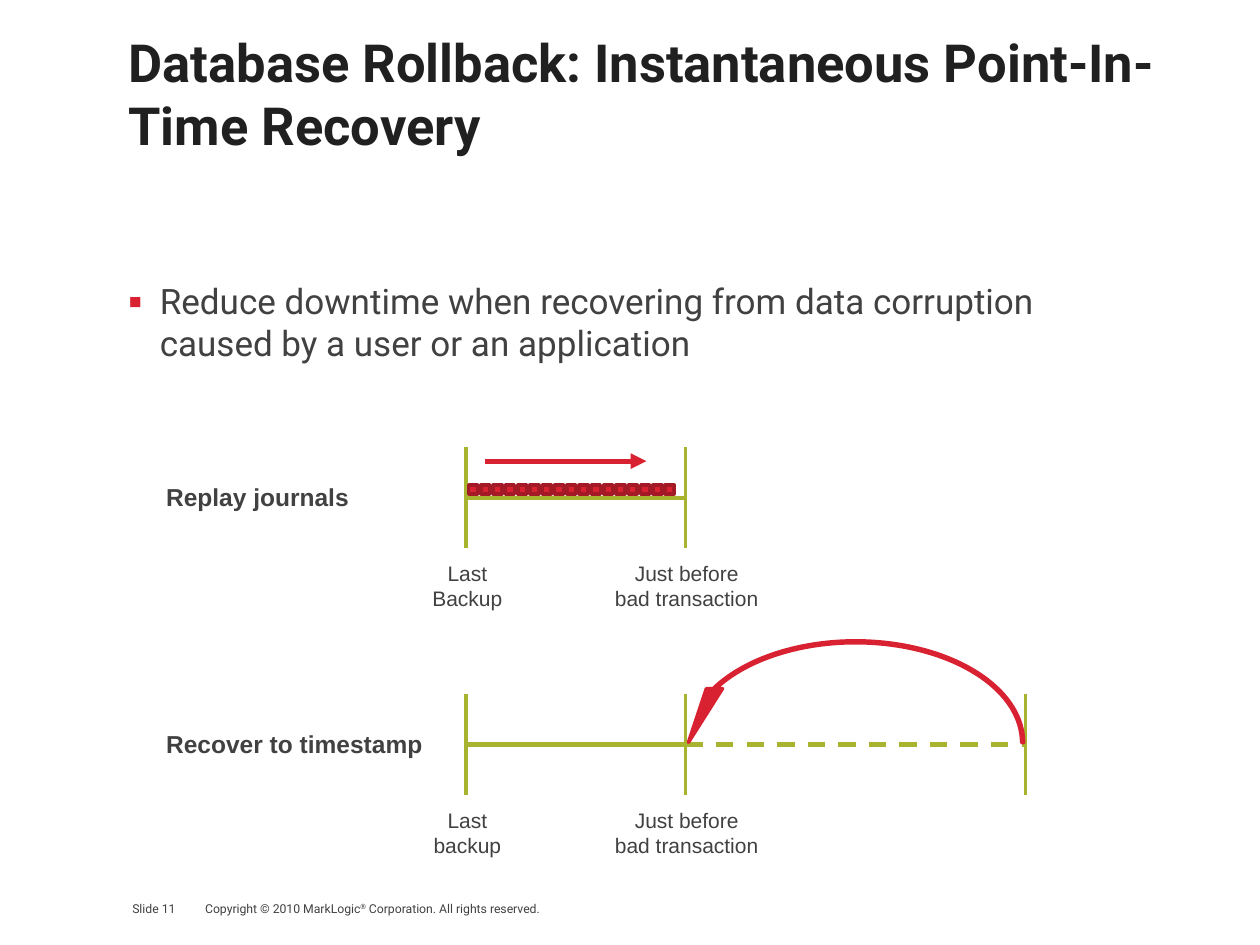
from lxml import etree
from pptx import Presentation
from pptx.dml.color import RGBColor
from pptx.enum.dml import MSO_LINE
from pptx.enum.shapes import MSO_CONNECTOR, MSO_SHAPE
from pptx.enum.text import MSO_ANCHOR, MSO_AUTO_SIZE, PP_ALIGN
from pptx.oxml.ns import qn
from pptx.util import Inches, Pt

COLORS = {
    "title": "202020",
    "text": "414141",
    "timeline": "A8B42F",
    "red": "D92231",
    "dark_red": "A31925",
}
REGISTERED = "®"

prs = Presentation()
prs.slide_width, prs.slide_height = Inches(10), Inches(7.5)
slide = prs.slides.add_slide(prs.slide_layouts[5])


def write(text, left, top, width, height, *, shape=None, size=12, font="Arial",
          color="text", bold=False, align=PP_ALIGN.LEFT, anchor=MSO_ANCHOR.TOP,
          wrap=True, inset=None, bullet=None):
    """Set text in a given shape or a new text box, one paragraph per line."""
    box = (Inches(left), Inches(top), Inches(width), Inches(height))
    if shape is None:
        shape = slide.shapes.add_textbox(*box)
    else:
        shape.left, shape.top, shape.width, shape.height = box
    frame = shape.text_frame
    frame.word_wrap = wrap
    frame.auto_size = MSO_AUTO_SIZE.NONE
    frame.vertical_anchor = anchor
    if inset is not None:
        frame.margin_left = frame.margin_right = Inches(inset)
        frame.margin_top = frame.margin_bottom = Inches(inset)
    for i, line in enumerate(text.split("\n")):
        paragraph = frame.add_paragraph() if i else frame.paragraphs[0]
        paragraph.alignment = align
        if bullet:
            props = paragraph._p.get_or_add_pPr()
            props.set("marL", str(Inches(0.25)))
            props.set("indent", str(-Inches(0.25)))
            bullet_color = etree.SubElement(props, qn("a:buClr"))
            etree.SubElement(bullet_color, qn("a:srgbClr"), val=COLORS["red"])
            etree.SubElement(props, qn("a:buFont"), typeface=font)
            etree.SubElement(props, qn("a:buChar"), char=bullet)
        for part in filter(None, line.partition(REGISTERED)):
            run = paragraph.add_run()
            run.text = part
            run.font.size = Pt(size)
            run.font.name = font
            run.font.bold = bold
            run.font.color.rgb = RGBColor.from_string(COLORS[color])
            if part == REGISTERED:
                run.font._element.set("baseline", "30000")


def draw_line(x1, y1, x2, y2, *, color="timeline", weight=2.0, dash=None, arrow=False):
    line = slide.shapes.add_connector(
        MSO_CONNECTOR.STRAIGHT, Inches(x1), Inches(y1), Inches(x2), Inches(y2))
    line.line.color.rgb = RGBColor.from_string(COLORS[color])
    line.line.width = Pt(weight)
    if dash:
        line.line.dash_style = dash
    if arrow:
        etree.SubElement(line.line._get_or_add_ln(), qn("a:tailEnd"), type="triangle")
    etree.SubElement(line._element.spPr, qn("a:effectLst"))


# Footer
write("Slide 11", 1.05, 7.15, 0.65, 0.12, size=7, font="Roboto", inset=0)
write("Copyright © 2010 MarkLogic® Corporation. All rights reserved.",
      1.53, 7.1, 5, 0.22, size=7, font="Roboto")

# Title and main point
write("Database Rollback: Instantaneous Point-In-Time Recovery",
      0.92, 0.3, 8.97, 0.87, shape=slide.shapes.title, size=30, font="Roboto",
      color="title", bold=True, anchor=MSO_ANCHOR.MIDDLE)
write("Reduce downtime when recovering from data corruption caused by a user "
      "or an application",
      0.92, 2.17, 8.33, 4.53, size=20, font="Roboto", bullet="▪")

# Timelines: heading, axis height, backup label, tick positions
backup_x, bad_x, now_x = 3.7, 5.44, 8.14
tick_half = 0.4
timelines = [
    ("Replay journals", 3.95, "Last\nBackup", [backup_x, bad_x]),
    ("Recover to timestamp", 5.91, "Last\nbackup", [backup_x, bad_x, now_x]),
]
for heading, axis_y, backup_label, ticks in timelines:
    write(heading, 1.22, axis_y - 0.17, 2.7, 0.34, size=14, bold=True)
    draw_line(backup_x, axis_y, bad_x, axis_y, weight=2.5)
    for x in ticks:
        draw_line(x, axis_y - tick_half, x, axis_y + tick_half)
    for label, x, width in [(backup_label, backup_x, 0.76),
                            ("Just before\nbad transaction", bad_x, 1.35)]:
        write(label, x + 0.01 - width / 2, axis_y + 0.45, width, 0.5,
              align=PP_ALIGN.CENTER, wrap=False)

# Journal entries and replay direction
for i in range(17):
    journal = slide.shapes.add_shape(
        MSO_SHAPE.RECTANGLE, Inches(3.72 + i * 1.56 / 16), Inches(3.85),
        Inches(0.07), Inches(0.07))
    journal.shadow.inherit = False
    journal.fill.solid()
    journal.fill.fore_color.rgb = RGBColor.from_string(COLORS["red"])
    journal.line.color.rgb = RGBColor.from_string(COLORS["dark_red"])
    journal.line.width = Pt(2)
draw_line(3.85, 3.66, 5.13, 3.66, color="red", weight=3, arrow=True)

# Rollback from now to just before the bad transaction
draw_line(bad_x, 5.91, now_x, 5.91, weight=2.5, dash=MSO_LINE.DASH)
rollback = slide.shapes.add_shape(
    MSO_SHAPE.CIRCULAR_ARROW, Inches(5.4), Inches(5.03), Inches(2.78), Inches(1.73))
for i, value in enumerate([0.009, 12.54, 203.408, 108, 0.037]):
    rollback.adjustments[i] = value
rollback._element.spPr.xfrm.set("flipH", "1")
rollback.shadow.inherit = False
rollback.fill.solid()
rollback.fill.fore_color.rgb = RGBColor.from_string(COLORS["red"])
rollback.line.color.rgb = RGBColor.from_string(COLORS["red"])
rollback.line.width = Pt(2)

prs.save("out.pptx")
